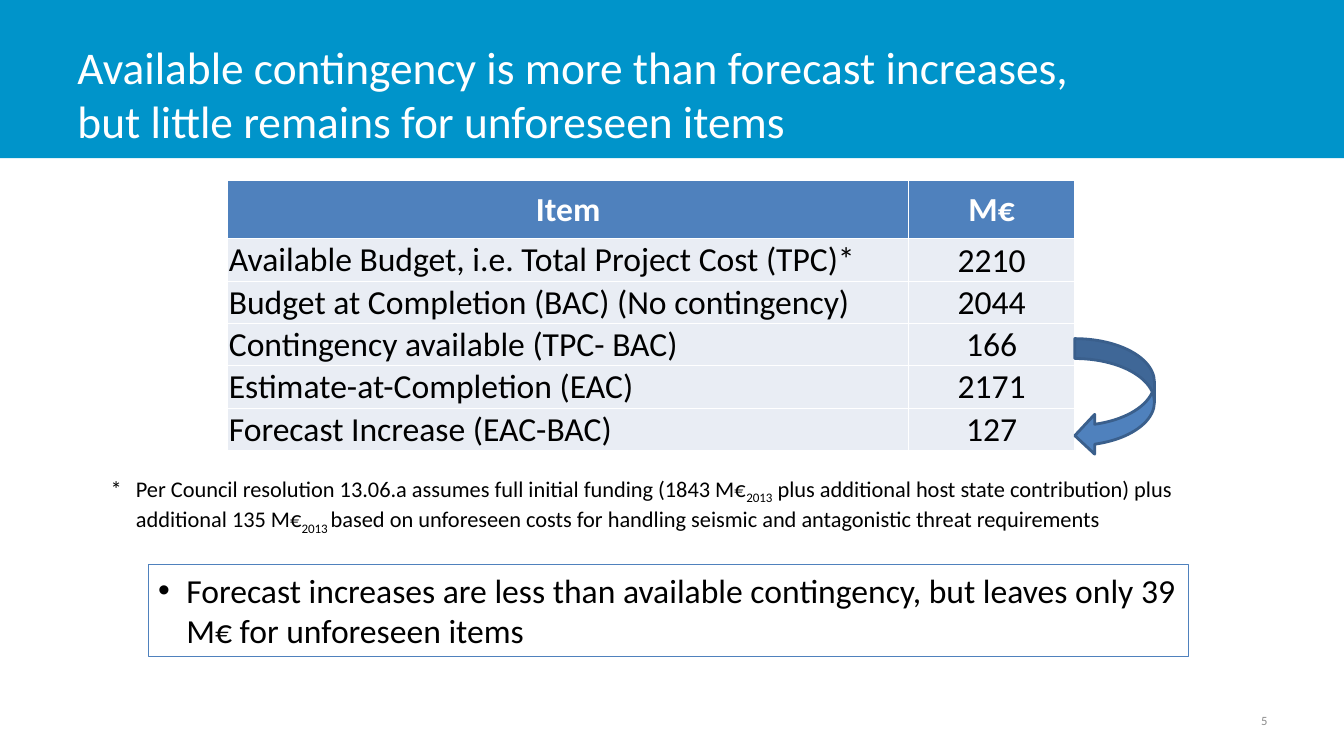
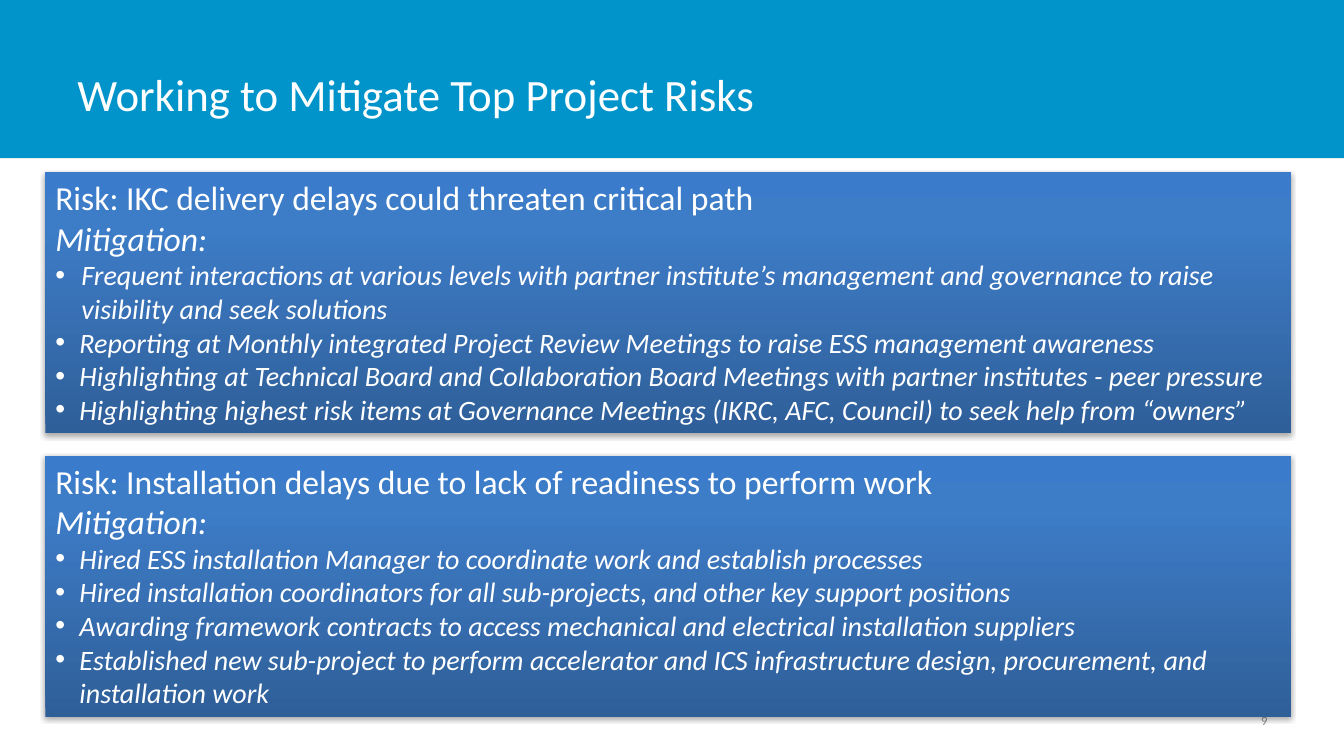
from lxml import etree
from pptx import Presentation
from pptx.dml.color import RGBColor
from pptx.enum.shapes import MSO_SHAPE
from pptx.enum.text import MSO_ANCHOR, MSO_AUTO_SIZE, PP_ALIGN
from pptx.oxml import parse_xml
from pptx.oxml.ns import qn
from pptx.util import Inches, Pt

RECT = MSO_SHAPE.RECTANGLE
ARROW = MSO_SHAPE.CURVED_LEFT_ARROW
TOP, MIDDLE, BOTTOM = MSO_ANCHOR.TOP, MSO_ANCHOR.MIDDLE, MSO_ANCHOR.BOTTOM
LEFT, CENTER, RIGHT = PP_ALIGN.LEFT, PP_ALIGN.CENTER, PP_ALIGN.RIGHT
GROW = MSO_AUTO_SIZE.SHAPE_TO_FIT_TEXT
FONT = "Calibri"
HEX = {"band": "0094CA", "blue": "4F81BD", "edge": "3A5F8C", "pale": "E9EDF4",
       "white": "FFFFFF", "black": "000000", "gray": "8C8C8C"}
RGB = {name: RGBColor.from_string(code) for name, code in HEX.items()}
NS = 'xmlns:a="http://schemas.openxmlformats.org/drawingml/2006/main"'
GRAD = f"""<a:gradFill {NS} rotWithShape="1"><a:gsLst>
<a:gs pos="0"><a:srgbClr val="2F5F99"/></a:gs>
<a:gs pos="80000"><a:srgbClr val="3D7CC7"/></a:gs>
<a:gs pos="100000"><a:srgbClr val="3A7CCB"/></a:gs>
</a:gsLst><a:lin ang="16200000" scaled="0"/></a:gradFill>"""
SHADOW = f"""<a:effectLst {NS}>
<a:outerShdw blurRad="40000" dist="23000" dir="5400000" rotWithShape="0">
<a:srgbClr val="000000"><a:alpha val="35000"/></a:srgbClr>
</a:outerShdw></a:effectLst>"""


def write(para, text, size, color, align=LEFT, hang=0, bullet=False):
    para.text = text
    para.alignment = align
    props = para._p.get_or_add_pPr()
    if hang:
        props.set("marL", str(Inches(hang)))
        props.set("indent", str(-Inches(hang)))
    if bullet:
        etree.SubElement(props, qn("a:buFont")).set("typeface", "Arial")
        etree.SubElement(props, qn("a:buChar")).set("char", "•")
    para.font.name = FONT
    para.font.size = Pt(size)
    para.font.color.rgb = RGB[color]


def add_box(slide, box, anchor=TOP, kind=None):
    place = [Inches(side) for side in box]
    if kind is None:
        shape = slide.shapes.add_textbox(*place)
    else:
        shape = slide.shapes.add_shape(kind, *place)
        shape.shadow.inherit = False
    shape.text_frame.word_wrap = True
    shape.text_frame.vertical_anchor = anchor
    return shape


deck = Presentation()
deck.slide_width, deck.slide_height = Inches(13.33), Inches(7.5)

pages = []
for title, size, number in [
    ("Available contingency is more than forecast increases, "
     "but little remains for unforeseen items", 32.4, "5"),
    ("Working to Mitigate Top Project Risks", 32, "9"),
]:
    slide = deck.slides.add_slide(deck.slide_layouts[6])
    band = add_box(slide, (0, 0, 13.33, 1.57), kind=RECT)
    band.fill.solid()
    band.fill.fore_color.rgb = RGB["band"]
    band.line.fill.background()
    head = add_box(slide, (0.67, 0.3, 10.41, 1.25), MIDDLE)
    write(head.text_frame.paragraphs[0], title, size, "white")
    foot = add_box(slide, (9.56, 6.95, 3.11, 0.4), MIDDLE)
    write(foot.text_frame.paragraphs[0], number, 9, "gray", RIGHT)
    pages.append(slide)
budget, risks = pages

note = add_box(budget, (1.47, 5.6, 10.32, 0.91), kind=RECT)
note.fill.background()
note.line.color.rgb = RGB["blue"]
note.line.width = Pt(0.75)
write(note.text_frame.paragraphs[0],
      "Forecast increases are less than available contingency, "
      "but leaves only 39 M€ for unforeseen items",
      24, "black", hang=0.28, bullet=True)

rows = [
    ("Item", "M€", MIDDLE),
    ("Available Budget, i.e. Total Project Cost (TPC)*", "2210", BOTTOM),
    ("Budget at Completion (BAC) (No contingency)", "2044", BOTTOM),
    ("Contingency available (TPC- BAC)", "166", MIDDLE),
    ("Estimate-at-Completion (EAC)", "2171", MIDDLE),
    ("Forecast Increase (EAC-BAC)", "127", MIDDLE),
]
table = budget.shapes.add_table(len(rows), 2, Inches(2.26), Inches(1.79),
                                Inches(8.4), Inches(2.68)).table
table.horz_banding = False
table.columns[0].width, table.columns[1].width = Inches(6.75), Inches(1.65)
for r, (item, value, anchor) in enumerate(rows):
    top = r == 0
    table.rows[r].height = Inches(0.58 if top else 0.42)
    for c, text in enumerate((item, value)):
        cell = table.cell(r, c)
        cell.margin_left = cell.margin_right = cell.margin_top = Inches(0.01)
        cell.margin_bottom = 0
        cell.vertical_anchor = anchor if c else MIDDLE
        cell.fill.solid()
        cell.fill.fore_color.rgb = RGB["blue" if top else "pale"]
        para = cell.text_frame.paragraphs[0]
        write(para, text, 24, "white" if top else "black",
              CENTER if top or c else LEFT)
        para.font.bold = top

source = add_box(budget, (1, 4.66, 11.27, 0.8)).text_frame.paragraphs[0]
write(source, "", 16, "black", hang=0.25)
for text, low in [
    ("*\tPer Council resolution 13.06.a assumes full initial funding (1843 M€", False),
    ("2013", True),
    (" plus additional host state contribution) plus additional 135 M€", False),
    ("2013 ", True),
    ("based on unforeseen costs for handling seismic and antagonistic "
     "threat requirements", False),
]:
    run = source.add_run()
    run.text = text
    if low:
        run._r.get_or_add_rPr().set("baseline", "-25000")

arrow = add_box(budget, (10.66, 3.36, 0.79, 1.16), kind=ARROW)
arrow.fill.solid()
arrow.fill.fore_color.rgb = RGB["blue"]
arrow.line.color.rgb = RGB["edge"]
arrow.line.width = Pt(2)

cards = [
    ("Risk: IKC delivery delays could threaten critical path", [
        ("Frequent interactions at various levels with partner institute’s "
         "management and governance to raise visibility and seek solutions", 0),
        ("Reporting at Monthly integrated Project Review Meetings to raise "
         "ESS management awareness", 1),
        ("Highlighting at Technical Board and Collaboration Board Meetings "
         "with partner institutes - peer pressure", 1),
        ("Highlighting highest risk items at Governance Meetings "
         "(IKRC, AFC, Council) to seek help from “owners”", 1),
    ]),
    ("Risk: Installation delays due to lack of readiness to perform work", [
        ("Hired ESS installation Manager to coordinate work and establish "
         "processes", 1),
        ("Hired installation coordinators for all sub-projects, and other key "
         "support positions", 1),
        ("Awarding framework contracts to access mechanical and electrical "
         "installation suppliers", 1),
        ("Established new sub-project to perform accelerator and ICS "
         "infrastructure design, procurement, and installation work", 1),
    ]),
]
for i, (risk, steps) in enumerate(cards):
    card = add_box(risks, (0.45, 1.71 + i * 2.81, 12.36, 2.59), kind=RECT)
    props = card._element.spPr
    props.remove(props.find(qn("a:effectLst")))
    props.append(parse_xml(GRAD))
    card.line.fill.background()
    props.append(parse_xml(SHADOW))
    frame = card.text_frame
    frame.auto_size = GROW
    write(frame.paragraphs[0], risk, 24, "white", hang=0.51)
    para = frame.add_paragraph()
    write(para, "Mitigation:", 24, "white", hang=0.51)
    para.font.italic = True
    for step, level in steps:
        para = frame.add_paragraph()
        para.level = level
        write(para, step, 20, "white", hang=0.24 if level else 0.26, bullet=True)
        para.font.italic = True

deck.save("out.pptx")
